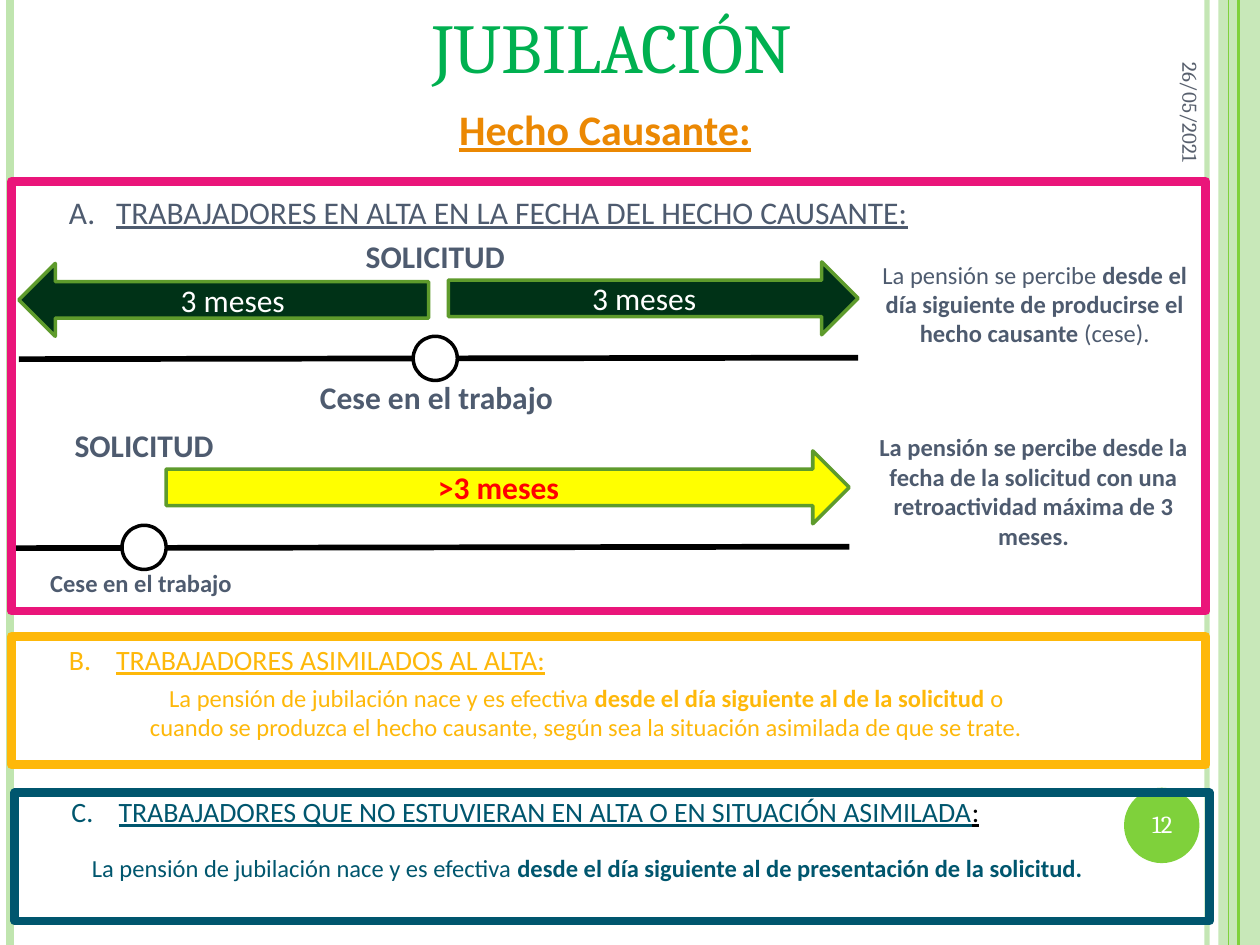
import pptx
import pptx.dml.color
import pptx.enum.shapes
import pptx.enum.text
import pptx.oxml.ns
import pptx.util
from lxml import etree

Cm = pptx.util.Cm
Pt = pptx.util.Pt
RGB = pptx.dml.color.RGBColor.from_string
SHAPE = pptx.enum.shapes.MSO_SHAPE
ANCHOR = pptx.enum.text.MSO_ANCHOR
ALIGN = pptx.enum.text.PP_ALIGN
qn = pptx.oxml.ns.qn

COLORS = {
    "pale": "C0E5AF", "lime": "7FD13B", "title": "00B050", "orange": "EB8803",
    "slate": "4E5B6F", "grey": "575F6D", "forest": "003217", "edge": "5E9B2C",
    "yellow": "FFFF00", "red": "FF0000", "pink": "EA157A", "amber": "FEB80A",
    "teal": "00566E", "black": "000000", "white": "FFFFFF",
}

deck = pptx.Presentation()
deck.slide_width, deck.slide_height = Cm(25.4), Cm(19.05)
slide = deck.slides.add_slide(deck.slide_layouts[5])
shapes = slide.shapes


def add_figure(kind, box, fill=None, line=None, width=0):
    figure = shapes.add_shape(kind, *map(Cm, box))
    figure.shadow.inherit = False
    if fill:
        figure.fill.solid()
        figure.fill.fore_color.rgb = RGB(COLORS[fill])
    else:
        figure.fill.background()
    if line:
        figure.line.color.rgb = RGB(COLORS[line])
        figure.line.width = Pt(width)
    else:
        figure.line.fill.background()
    return figure


def write(frame, paragraphs, size, color, font="Calibri", underline=None,
          align=ALIGN.CENTER, anchor=ANCHOR.TOP):
    frame.word_wrap = True
    frame.auto_size = pptx.enum.text.MSO_AUTO_SIZE.NONE
    frame.vertical_anchor = anchor
    for index, parts in enumerate(paragraphs):
        paragraph = frame.add_paragraph() if index else frame.paragraphs[0]
        paragraph.alignment = align
        for text, bold in parts:
            run = paragraph.add_run()
            run.text = text
            run.font.name = font
            run.font.size = Pt(size)
            run.font.bold = bold
            run.font.underline = underline
            run.font.color.rgb = RGB(COLORS[color])
    return frame.paragraphs[0]


title = shapes.title
title.left, title.top, title.width, title.height = Cm(0), Cm(-1.24), Cm(24.69), Cm(3.2)
name = write(title.text_frame, [[("jubilación", False)]], 50, "title", "Cambria",
             anchor=ANCHOR.BOTTOM)
name.runs[0].font._element.set("cap", "small")

side_band = add_figure(SHAPE.RECTANGLE, (24.56, 0, 0.84, 19.05), "pale")
band_color = side_band.fill._xPr.find(qn("a:solidFill"))[0]
etree.SubElement(band_color, qn("a:alpha")).set("val", "87000")

for x1, y1, x2, y2, color, width, opacity in [
    (24.33, 0, 24.33, 19.05, "pale", 3, 93),
    (0.2, 0, 0.2, 19.05, "pale", 4.5, 100),
    (24.97, 0, 24.97, 19.05, "lime", 1.5, 100),
    (24.77, 0, 24.77, 19.05, "lime", 0.75, 100),
    (0.38, 7.24, 17.3, 7.21, "black", 3.25, 100),
    (0.2, 11.05, 17.12, 11.02, "black", 3.25, 100),
]:
    rule = shapes.add_connector(pptx.enum.shapes.MSO_CONNECTOR.STRAIGHT,
                                Cm(x1), Cm(y1), Cm(x2), Cm(y2))
    rule.line.color.rgb = RGB(COLORS[color])
    rule.line.width = Pt(width)
    if opacity < 100:
        rule_color = rule.line._ln.find(qn("a:solidFill"))[0]
        etree.SubElement(rule_color, qn("a:alpha")).set("val", str(opacity * 1000))
    etree.SubElement(rule._element.spPr, qn("a:effectLst"))

add_figure(SHAPE.OVAL, (22.66, 15.88, 1.52, 1.52), "lime")
for left, top in [(8.33, 6.78), (2.46, 10.59)]:
    add_figure(SHAPE.OVAL, (left, top, 0.89, 0.89), "white", "black", 2)

for kind, left, top, width, fill, text, color, bold in [
    (SHAPE.LEFT_ARROW, 0.38, 5.31, 8.26, "forest", "3 meses", "white", False),
    (SHAPE.RIGHT_ARROW, 9.04, 5.28, 8.26, "forest", "3 meses", "white", False),
    (SHAPE.RIGHT_ARROW, 3.35, 9.09, 13.77, "yellow", ">3 meses", "red", True),
]:
    arrow = add_figure(kind, (left, top, width, 1.47), fill, "edge", 2)
    write(arrow.text_frame, [[(text, bold)]], 18, color, anchor=ANCHOR.MIDDLE)

date = shapes.add_textbox(Cm(21.21), Cm(0.18), Cm(5.59), Cm(1.07))
date.rotation = 90
write(date.text_frame, [[("26/05/2021", False)]], 12, "grey", "Cambria",
      align=ALIGN.RIGHT, anchor=ANCHOR.MIDDLE)
page = shapes.add_textbox(Cm(22.58), Cm(15.88), Cm(1.7), Cm(1.45))
write(page.text_frame, [[("12", False)]], 14, "white", "Cambria", anchor=ANCHOR.MIDDLE)
subtitle = shapes.add_textbox(Cm(6.91), Cm(1.96), Cm(10.57), Cm(1.22))
write(subtitle.text_frame, [[("Hecho Causante:", True)]], 24, "orange", underline=True)

for box, size, color, paragraphs in [
    ((5.51, 7.49, 6.58, 1.02), 18, "slate", [[("Cese en el trabajo", True)]]),
    ((6.58, 4.65, 4.39, 1.02), 18, "slate", [[("SOLICITUD", True)]]),
    ((17.48, 5.11, 6.76, 2.64), 14, "slate", [[
        ("La pensión se percibe ", False),
        ("desde el día siguiente de producirse el hecho causante ", True),
        ("(cese).", False)]]),
    ((0.33, 11.33, 5.03, 0.86), 14, "slate", [[("Cese en el trabajo", True)]]),
    ((0.71, 8.46, 4.39, 1.02), 18, "slate", [[("SOLICITUD", True)]]),
    ((17.15, 8.59, 7.37, 2.64), 14, "slate", [[
        ("La pensión se percibe desde la fecha de la solicitud con una "
         "retroactividad máxima de 3 meses.", True)]]),
    ((0.43, 13.64, 22.78, 1.45), 14, "amber", [
        [("La pensión de jubilación nace y es efectiva ", False),
         ("desde el día siguiente al de la solicitud ", True),
         ("o", False)],
        [("cuando se produzca el hecho causante, según sea la situación "
          "asimilada de que se trate.", False)]]),
    ((0.43, 17.07, 22.83, 1.45), 14, "teal", [[
        ("La pensión de jubilación nace y es efectiva ", False),
        ("desde el día siguiente al de presentación de la solicitud.", True)]]),
]:
    note = shapes.add_textbox(*map(Cm, box))
    write(note.text_frame, paragraphs, size, color)

for number, (left, top, width, size, color, parts) in enumerate([
    (1.14, 3.76, 21.79, 18, "slate",
     ["TRABAJADORES EN ALTA EN LA FECHA DEL HECHO CAUSANTE:"]),
    (1.14, 12.83, 12.09, 16, "amber", ["TRABAJADORES ASIMILADOS AL ALTA:"]),
    (1.19, 15.9, 23.52, 16, "teal",
     ["TRABAJADORES QUE NO ESTUVIERAN EN ALTA O EN SITUACIÓN ASIMILADA", ":"]),
], start=1):
    heading_box = shapes.add_textbox(Cm(left), Cm(top), Cm(width), Cm(1))
    heading = write(heading_box.text_frame, [[(part, False) for part in parts]],
                    size, color, underline=True, align=ALIGN.LEFT)
    properties = heading._p.get_or_add_pPr()
    properties.set("marL", str(Cm(0.95)))
    properties.set("indent", str(Cm(-0.95)))
    letter = etree.SubElement(properties, qn("a:buAutoNum"))
    letter.set("type", "alphaUcPeriod")
    letter.set("startAt", str(number))
heading.runs[-1].font.color.rgb = RGB(COLORS["black"])

for left, top, height, color in [
    (0.23, 3.66, 8.66, "pink"),
    (0.23, 12.83, 2.59, "amber"),
    (0.3, 15.98, 2.59, "teal"),
]:
    add_figure(SHAPE.RECTANGLE, (left, top, 24.08, height), None, color, 5)

deck.save("out.pptx")
